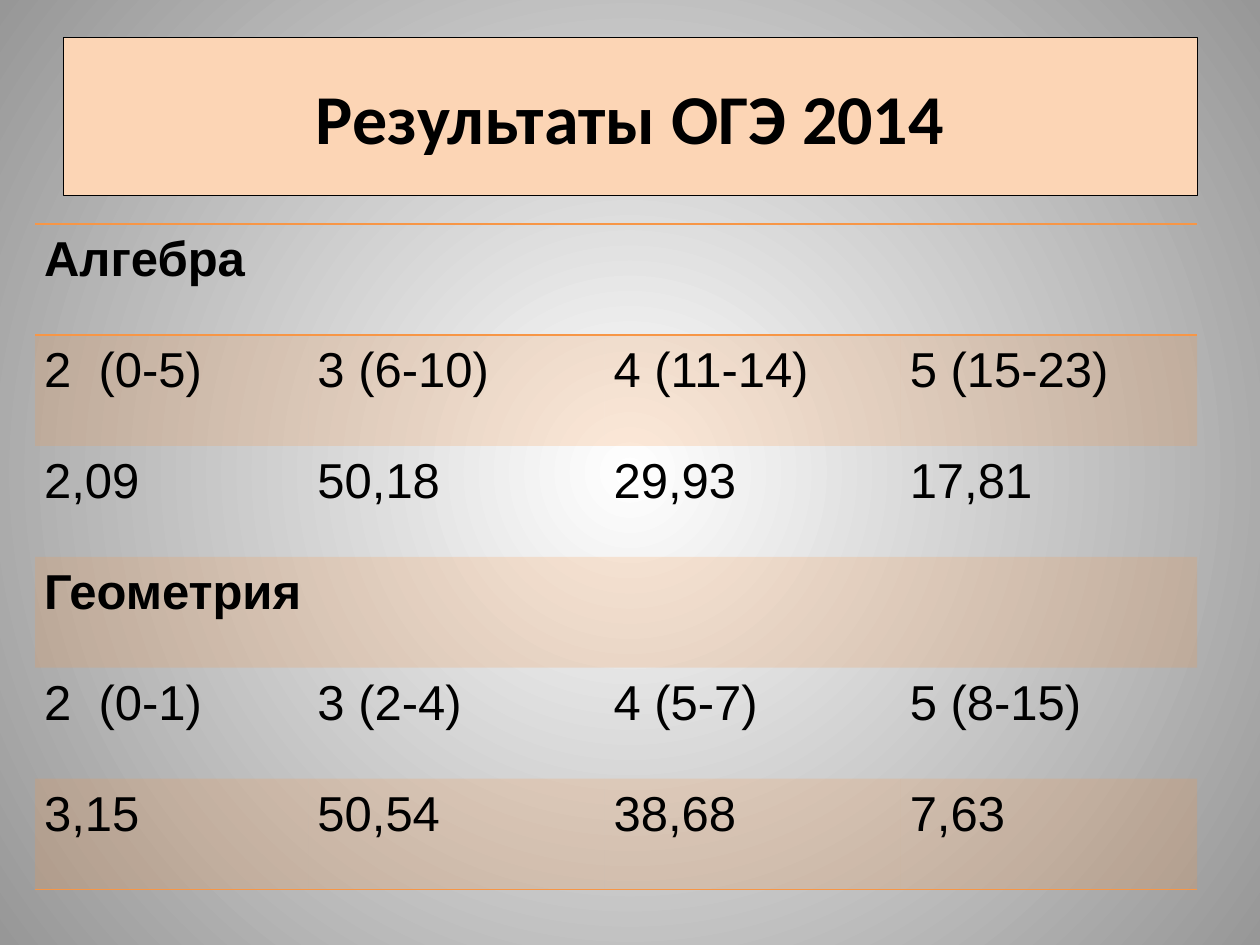
from lxml.etree import SubElement
from pptx import Presentation
from pptx.dml.color import RGBColor
from pptx.enum.text import MSO_ANCHOR, PP_ALIGN
from pptx.oxml import parse_xml
from pptx.oxml.ns import nsdecls, qn
from pptx.util import Cm, Pt

TITLE = "Результаты ОГЭ 2014"
ROWS = [
    ["Алгебра"],
    ["2  (0-5)", "3 (6-10)", "4 (11-14)", "5 (15-23)"],
    ["2,09", "50,18", "29,93", "17,81"],
    ["Геометрия"],
    ["2  (0-1)", "3 (2-4)", "4 (5-7)", "5 (8-15)"],
    ["3,15", "50,54", "38,68", "7,63"],
]
COLUMN_WIDTHS = [5.51, 5.97, 5.97, 5.97]
ROW_HEIGHT = 2.235
BORDERS = {0: ["lnT", "lnB"], len(ROWS) - 1: ["lnB"]}
NO_STYLE_NO_GRID = "{2D5ABB26-0587-4C30-8999-92F81FD0307C}"

BLACK = RGBColor(0x00, 0x00, 0x00)
WHITE = RGBColor(0xFF, 0xFF, 0xFF)
GREY = RGBColor(0x97, 0x97, 0x97)
PEACH = RGBColor(0xFC, 0xD5, 0xB5)
ORANGE = RGBColor(0xF7, 0x96, 0x46)


def set_font(paragraph, name, size, bold):
    font = paragraph.font
    font.name, font.size, font.bold = name, Pt(size), bold
    font.color.rgb = BLACK


def paint_background(slide):
    """Radial gradient from white in the centre to grey."""
    fill = slide.background.fill
    fill.gradient()
    for stop, color in zip(fill.gradient_stops, (WHITE, GREY)):
        stop.color.rgb = color
    gradient = next(slide.element.iter(qn("a:gradFill")))
    gradient.remove(gradient.find(qn("a:lin")))
    gradient.find(qn("a:gsLst")).addnext(parse_xml(
        f'<a:path {nsdecls("a")} path="circle">'
        '<a:fillToRect l="50000" t="50000" r="50000" b="50000"/></a:path>'))


def add_title(slide):
    title = slide.shapes.title
    title.left, title.top = Cm(1.27), Cm(0.76)
    title.width, title.height = Cm(22.86), Cm(3.18)
    title.fill.solid()
    title.fill.fore_color.rgb = PEACH
    title.line.color.rgb = BLACK
    title.line.width = Pt(0.25)
    title.text_frame.text = TITLE
    title.text_frame.vertical_anchor = MSO_ANCHOR.MIDDLE
    paragraph = title.text_frame.paragraphs[0]
    paragraph.alignment = PP_ALIGN.CENTER
    set_font(paragraph, "Calibri", 40, True)


def fill_cell(cell, banded):
    if not banded:
        cell.fill.background()
        return
    cell.fill.solid()
    cell.fill.fore_color.rgb = ORANGE
    color = next(cell._tc.tcPr.iter(qn("a:srgbClr")))
    SubElement(color, qn("a:alpha"), val="20000")


def add_borders(cell, sides):
    for position, side in enumerate(sides):
        cell._tc.tcPr.insert(position, parse_xml(
            f'<a:{side} {nsdecls("a")} w="{Pt(1)}"><a:solidFill>'
            f'<a:srgbClr val="{ORANGE}"/></a:solidFill></a:{side}>'))


def add_results_table(slide):
    frame = slide.shapes.add_table(
        len(ROWS), len(COLUMN_WIDTHS), Cm(0.71), Cm(4.52),
        Cm(sum(COLUMN_WIDTHS)), Cm(ROW_HEIGHT * len(ROWS)))
    table = frame.table
    table.first_row = table.horz_banding = False
    table._tbl.tblPr.find(qn("a:tableStyleId")).text = NO_STYLE_NO_GRID
    for column, width in zip(table.columns, COLUMN_WIDTHS):
        column.width = Cm(width)

    for row_index, texts in enumerate(ROWS):
        table.rows[row_index].height = Cm(ROW_HEIGHT)
        is_heading = len(texts) == 1
        for cell in table.rows[row_index].cells:
            cell.margin_left = cell.margin_right = Cm(0.18)
            cell.margin_top = cell.margin_bottom = 0
            fill_cell(cell, banded=row_index % 2 == 1)
            add_borders(cell, BORDERS.get(row_index, []))
        for column_index, text in enumerate(texts):
            cell = table.cell(row_index, column_index)
            cell.text = text
            paragraph = cell.text_frame.paragraphs[0]
            paragraph.line_spacing = 1.15
            set_font(paragraph, "Arial", 28, is_heading)
        if is_heading:
            last_cell = table.cell(row_index, len(COLUMN_WIDTHS) - 1)
            table.cell(row_index, 0).merge(last_cell)


def main():
    presentation = Presentation()
    presentation.slide_width, presentation.slide_height = Cm(25.4), Cm(19.05)
    slide = presentation.slides.add_slide(presentation.slide_layouts[5])
    paint_background(slide)
    add_title(slide)
    add_results_table(slide)
    presentation.save("out.pptx")


if __name__ == "__main__":
    main()
